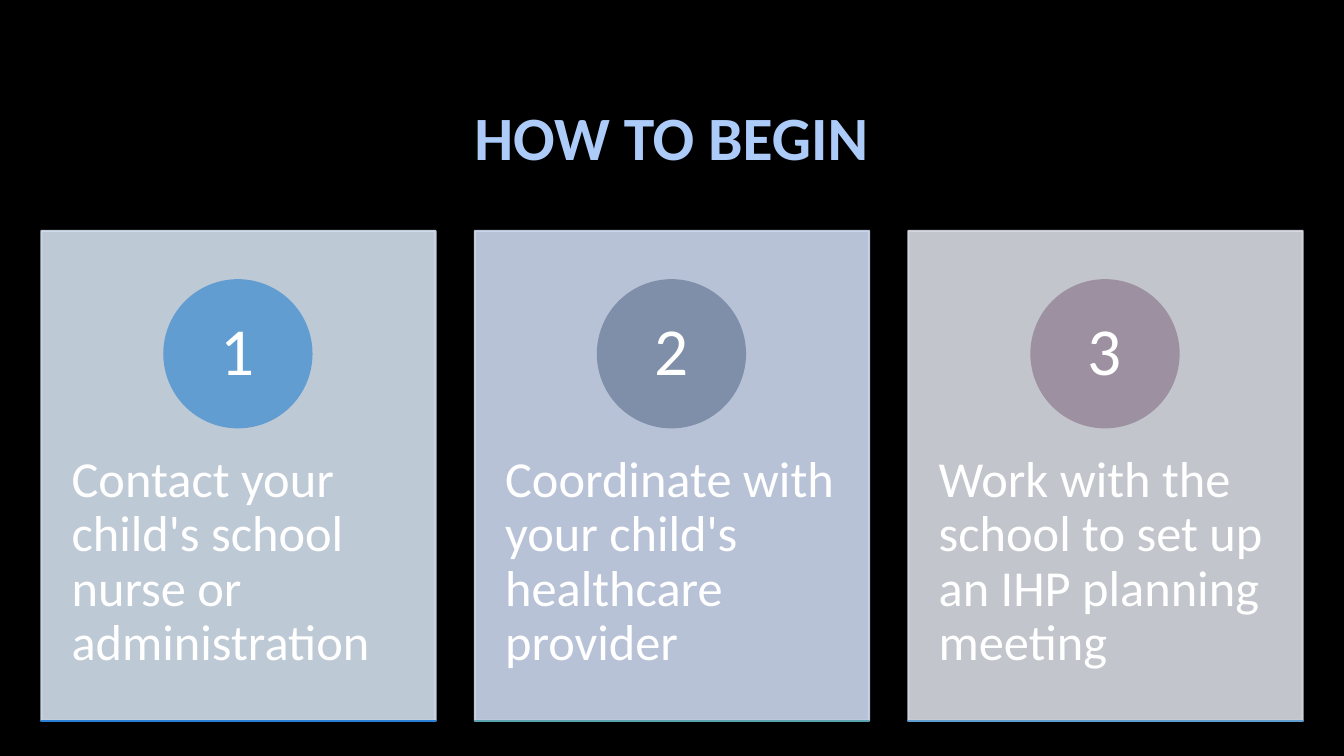
from lxml import etree
from pptx import Presentation, util as u
from pptx.dml.color import RGBColor
from pptx.enum import shapes, text
from pptx.oxml.ns import qn

PX = u.Inches(1) // 100
COLORS = {"background": "000000", "title": "ACCBF9", "text": "FFFFFF"}
STEPS = [
    # text, card, circle, base line
    ("Contact your child's school nurse or administration",
     "D3DFEE", "629DD1", "297FD5"),
    ("Coordinate with your child's healthcare provider",
     "CDD8EF", "7F8FA9", "5AA2AE"),
    ("Work with the school to set up an IHP planning meeting",
     "D8DBE2", "9D90A0", "629DD1"),
]
CARD_LEFT, CARD_TOP, CARD_W, CARD_H, CARD_PITCH = 41, 229, 391, 486, 430
CIRCLE = 146


class Deck:
    font = "Calibri"

    def __init__(self, width, height):
        self.prs = Presentation()
        self.prs.slide_width, self.prs.slide_height = width * PX, height * PX
        self.s = self.prs.slides.add_slide(self.prs.slide_layouts[5])
        fill = self.s.background.fill
        fill.solid()
        fill.fore_color.rgb = RGBColor.from_string(COLORS["background"])

    def set_text(self, sp, words, size, color, bold=False, center=True, inset=(10, 5)):
        tf = sp.text_frame
        tf.text = words
        tf.word_wrap = True
        tf.auto_size = text.MSO_AUTO_SIZE.NONE
        tf.vertical_anchor = text.MSO_ANCHOR.MIDDLE if center else text.MSO_ANCHOR.TOP
        tf.margin_left = tf.margin_right = inset[0] * PX
        tf.margin_top = tf.margin_bottom = inset[1] * PX
        p = tf.paragraphs[0]
        p.alignment = text.PP_ALIGN.CENTER if center else text.PP_ALIGN.LEFT
        p.line_spacing = 0.9
        f = p.runs[0].font
        f.name, f.size, f.bold = self.font, u.Pt(size), bold
        f.color.rgb = RGBColor.from_string(color)

    def title(self, words, x, y, w, h):
        sp = self.s.shapes.title
        sp.left, sp.top, sp.width, sp.height = (v * PX for v in (x, y, w, h))
        self.set_text(sp, words, 44, COLORS["title"], bold=True)

    def shape(self, kind, x, y, w, h, color, opacity=100):
        sp = self.s.shapes.add_shape(kind, x * PX, y * PX, w * PX, h * PX)
        sp.shadow.inherit = False
        sp.fill.solid()
        sp.line.width = u.Pt(1.5)
        sp.line.fill.solid()
        for fill in (sp.fill, sp.line.fill):
            fill.fore_color.rgb = RGBColor.from_string(color)
        if opacity < 100:
            for clr in sp._element.spPr.iter(qn("a:srgbClr")):
                etree.SubElement(clr, qn("a:alpha"), val=str(opacity * 1000))
        return sp

    def label(self, words, x, y, w, h):
        sp = self.s.shapes.add_textbox(x * PX, y * PX, w * PX, h * PX)
        self.set_text(sp, words, 36, COLORS["text"], center=False, inset=(30, 36))

    def step(self, number, words, x, card, circle, base):
        """Draw one card with its numbered circle, text and base line."""
        rect, oval = shapes.MSO_SHAPE.RECTANGLE, shapes.MSO_SHAPE.OVAL
        self.shape(rect, x, CARD_TOP, CARD_W, CARD_H, card, opacity=90)
        self.label(words, x, CARD_TOP + 185, CARD_W, 292)
        sp = self.shape(oval, x + (CARD_W - CIRCLE) // 2, CARD_TOP + 49,
                        CIRCLE, CIRCLE, circle)
        self.set_text(sp, str(number), 48, COLORS["text"], inset=(11, 1))
        self.shape(rect, x, CARD_TOP + CARD_H, CARD_W, 0, base)


def main():
    deck = Deck(1333, 750)
    deck.title("HOW TO BEGIN", 100, 67, 1132, 145)
    for i, (words, *colors) in enumerate(STEPS):
        deck.step(i + 1, words, CARD_LEFT + i * CARD_PITCH, *colors)
    deck.prs.save("out.pptx")


if __name__ == "__main__":
    main()
